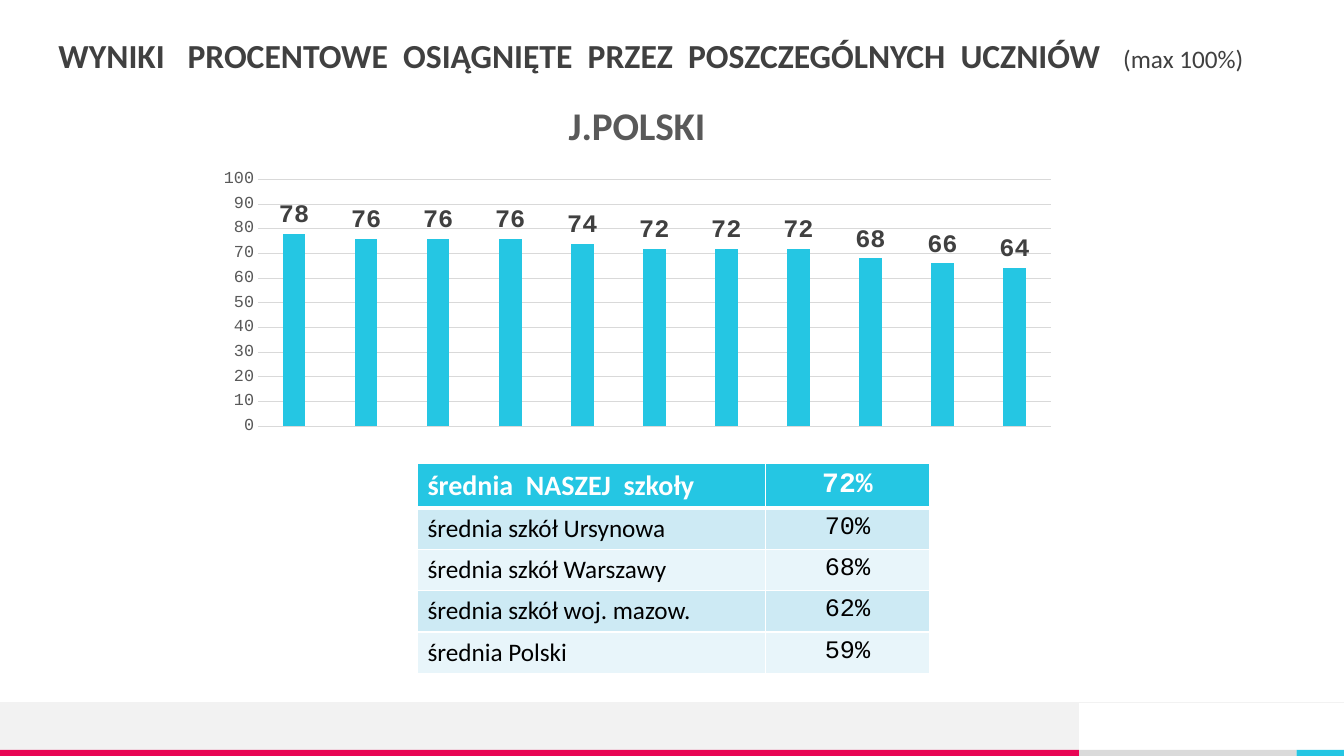
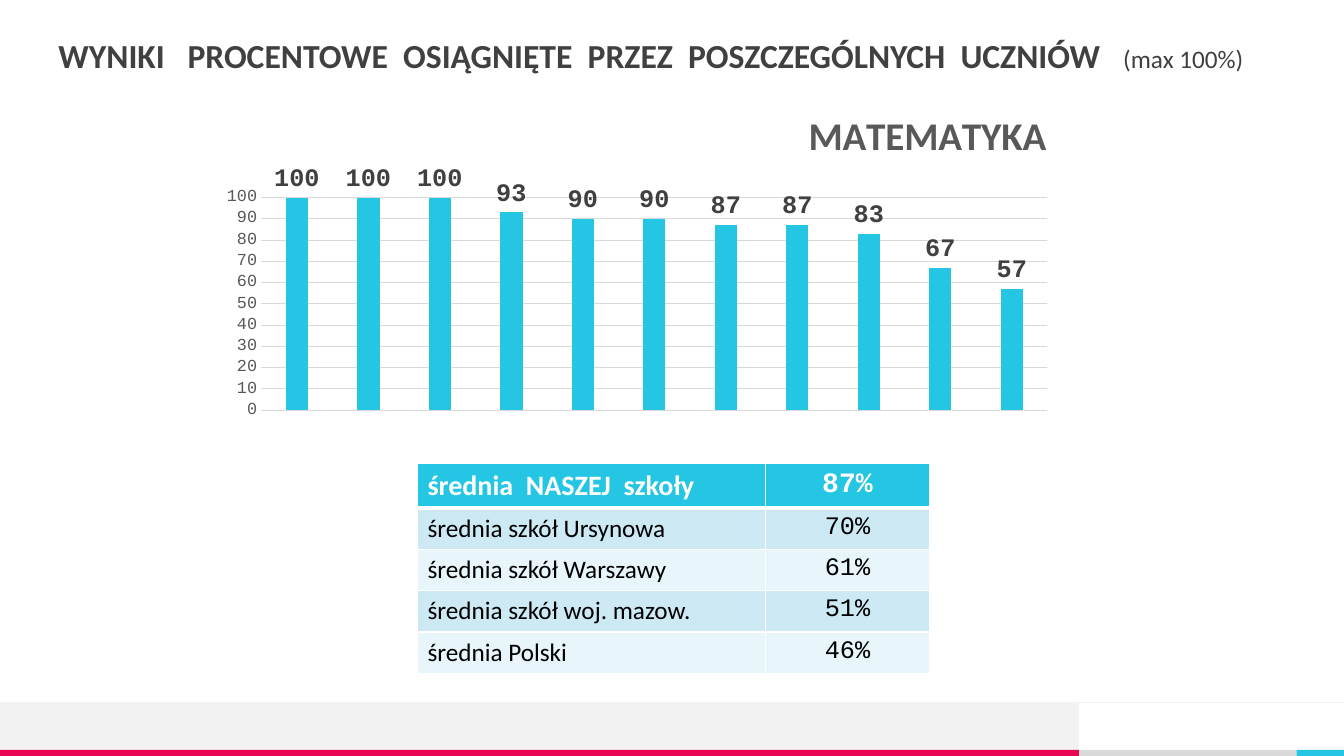
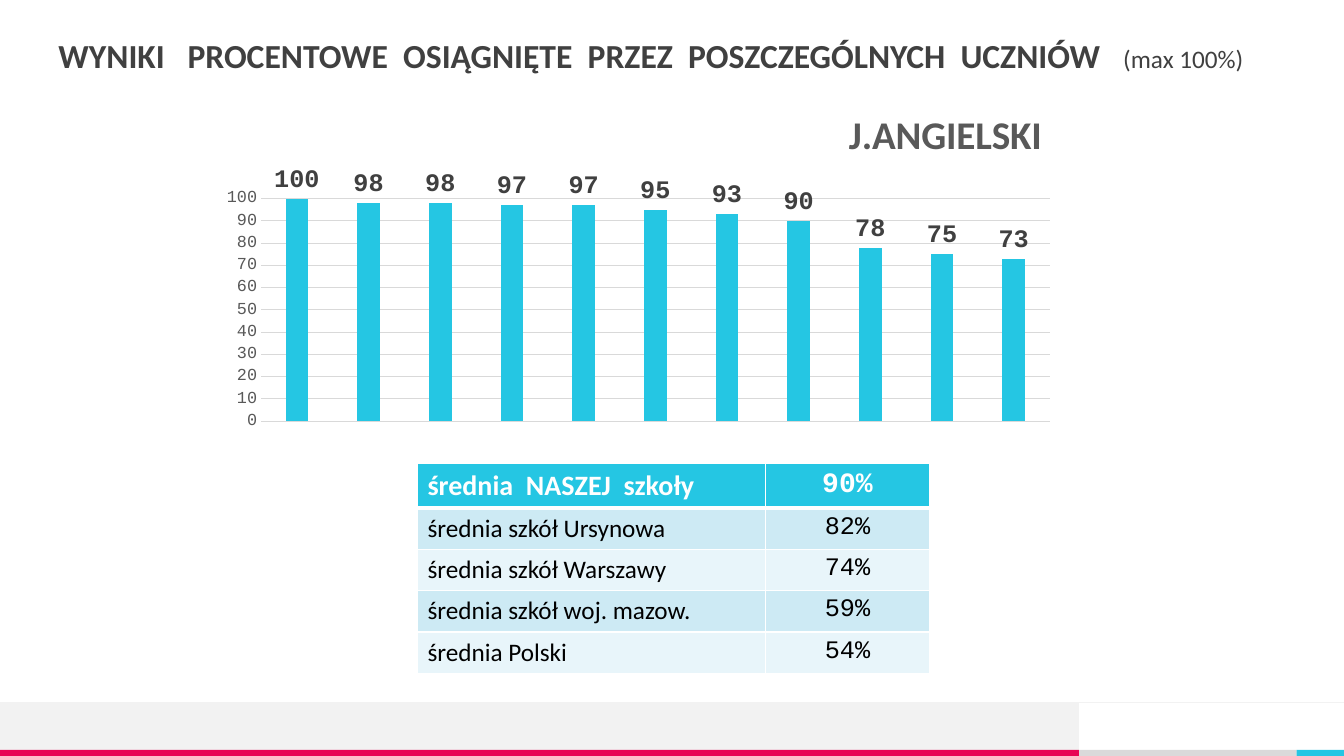
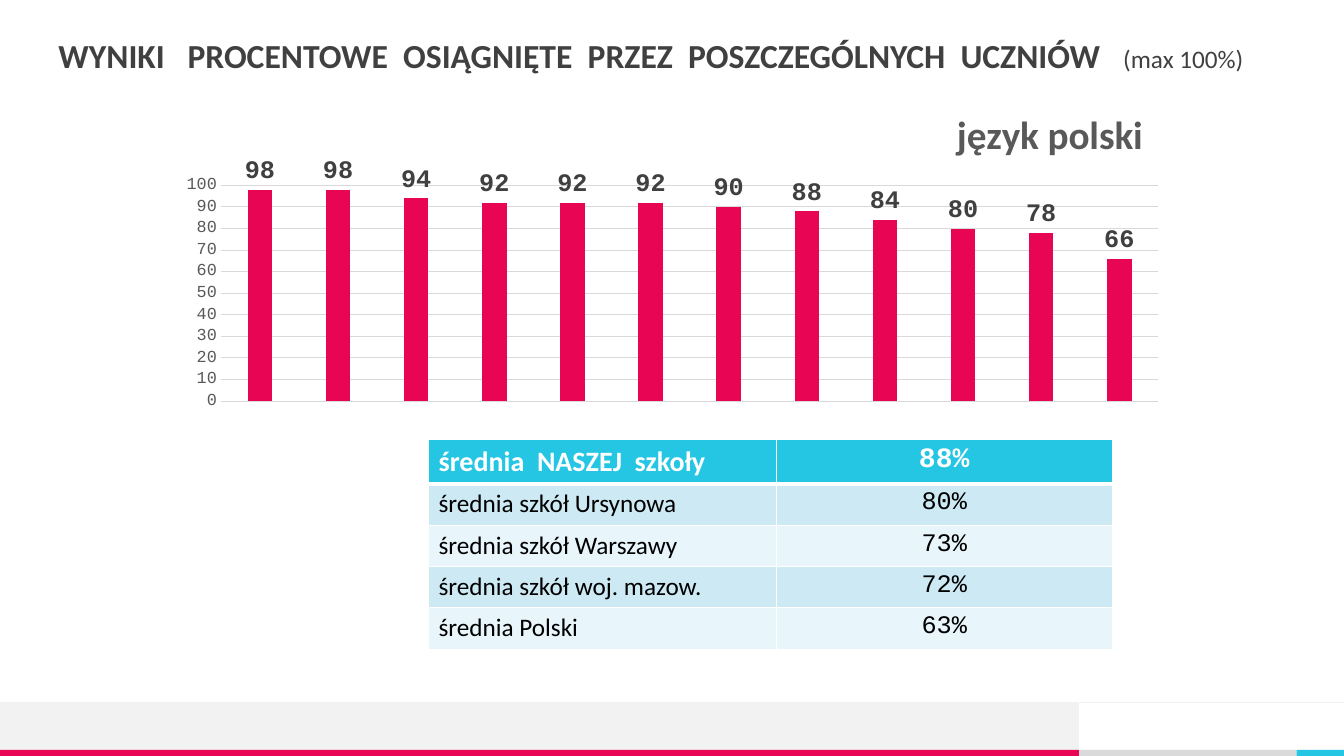
from dataclasses import dataclass

from lxml.etree import SubElement as Sub
from pptx import Presentation
from pptx.chart.data import CategoryChartData as ChartData
from pptx.dml.color import RGBColor as RGB
from pptx.enum.chart import XL_CHART_TYPE as Kind
from pptx.enum.chart import XL_LABEL_POSITION as Spot
from pptx.enum.chart import XL_TICK_MARK as Tick
from pptx.enum.shapes import MSO_CONNECTOR as Link
from pptx.enum.shapes import MSO_SHAPE as Form
from pptx.enum.text import MSO_ANCHOR as Anchor
from pptx.enum.text import MSO_AUTO_SIZE as Fit
from pptx.enum.text import PP_ALIGN as Align
from pptx.oxml import parse_xml
from pptx.oxml.ns import nsdecls, qn
from pptx.util import Inches, Pt


@dataclass(frozen=True)
class Theme:
    sans: str = "Calibri"
    mono: str = "Courier New"
    cyan: str = "25C6E3"
    pink: str = "E80554"
    ink: str = "404040"
    gray: str = "595959"
    grid: str = "D9D9D9"
    band: str = "F2F2F2"
    strip: str = "DADADA"
    black: str = "000000"
    white: str = "FFFFFF"
    rows: tuple = ("CDEAF4", "E8F5FA")
    title: int = 24
    head: int = 28
    top: int = 20
    body: int = 18
    axis: int = 12
    base: int = 10


@dataclass(frozen=True)
class Result:
    """Scores of one subject; boxes are left, top, width, height in inches."""
    name: str
    spot: tuple
    box: tuple
    plot: tuple
    scores: tuple
    means: tuple
    color: str
    grid: tuple = (4.14, 4.6)
    wide: float = 1.63


T = Theme()
WIDE, HIGH = 13.33, 7.5
BAND, FOOT, SPLIT, END = 6.97, 7.44, 10.7, 12.86
LABELS = ("średnia  NASZEJ  szkoły", "średnia szkół Ursynowa",
          "średnia szkół Warszawy", "średnia szkół woj. mazow.",
          "średnia Polski")
RESULTS = (
    Result("J.POLSKI", (5.57, 0.91), (2.05, 0.78, 8.54, 3.61),
           (2.56, 1.78, 7.86, 2.45),
           (78, 76, 76, 76, 74, 72, 72, 72, 68, 66, 64),
           (72, 70, 68, 62, 59), T.cyan),
    Result("MATEMATYKA", (7.95, 1.01), (2.08, 0.99, 8.48, 3.24),
           (2.59, 1.96, 7.8, 2.11),
           (100, 100, 100, 93, 90, 90, 87, 87, 83, 67, 57),
           (87, 70, 61, 51, 46), T.cyan),
    Result("J.ANGIELSKI", (8.35, 1), (2.08, 1, 8.5, 3.34),
           (2.59, 1.97, 7.82, 2.21),
           (100, 98, 98, 97, 97, 95, 93, 90, 78, 75, 73),
           (90, 82, 74, 59, 54), T.cyan),
    Result("język polski", (9.42, 0.97), (1.64, 1, 10.04, 3.14),
           (2.19, 1.84, 9.3, 2.14),
           (98, 98, 94, 92, 92, 92, 90, 88, 84, 80, 78, 66),
           (88, 80, 73, 72, 63), T.pink, (4.25, 4.36), 3.33),
)


def inch(*vals):
    return [Inches(v) for v in vals]


def style(font, size, color, bold=False, face=T.sans):
    font.size, font.bold, font.name = Pt(size), bold, face
    font.color.rgb = RGB.from_string(color)


def paint(fill, color):
    fill.solid()
    fill.fore_color.rgb = RGB.from_string(color)


def rect(slide, box, color):
    shape = slide.shapes.add_shape(Form.RECTANGLE, *inch(*box))
    shape.shadow.inherit = False
    paint(shape.fill, color)
    shape.line.fill.background()
    return shape


def rule(slide):
    line = slide.shapes.add_connector(
        Link.STRAIGHT, *inch(WIDE, BAND, 0, BAND))
    line.line.color.rgb = RGB.from_string(T.band)
    line.line.width = Pt(0.5)
    Sub(line.element.spPr, qn("a:effectLst"))
    return line


def dress(layout, slide):
    """Draw the shared footer and move it to the layout."""
    for item in list(layout.placeholders)[1:]:
        layout.shapes.element.remove(item.element)
    title = layout.placeholders[0]
    title.left, title.top, title.width, title.height = inch(
        0.58, 0.39, 12.56, 0.39)
    thick = HIGH - FOOT
    bars = (((SPLIT, FOOT, END - SPLIT, thick), T.strip),
            ((0, BAND, SPLIT, FOOT - BAND), T.band),
            ((0, FOOT, SPLIT, thick), T.pink),
            ((END, FOOT, WIDE - END, thick), T.cyan))
    parts = [rect(slide, box, color) for box, color in bars]
    for part in parts + [rule(slide)]:
        layout.shapes.element.append(part.element)


def heading(slide):
    frame = slide.shapes.title.text_frame
    frame.margin_left = frame.margin_right = 0
    frame.margin_top = frame.margin_bottom = 0
    frame.vertical_anchor, frame.auto_size = Anchor.TOP, Fit.NONE
    para = frame.paragraphs[0]
    tabs = Sub(para._p.get_or_add_pPr(), qn("a:tabLst"))
    Sub(tabs, qn("a:tab"), pos=str(Inches(10.56)), algn="l")
    para.alignment, para.line_spacing = Align.LEFT, 0.9
    para.space_before = Pt(10)
    style(para.font, T.title, T.ink, True)
    para.add_run().text = ("WYNIKI   PROCENTOWE  OSIĄGNIĘTE  PRZEZ  "
                           "POSZCZEGÓLNYCH  UCZNIÓW\t")
    note = para.add_run()
    note.text = "(max 100%)"
    note.font.size, note.font.bold = Pt(T.body), False


def place(node, index, box, spot):
    """Fix a chart part at a spot given in slide inches."""
    old = node.find(qn("c:layout"))
    if old is not None:
        node.remove(old)
    root = parse_xml(f"<c:layout {nsdecls('c')}/>")
    node.insert(index, root)
    man = Sub(root, qn("c:manualLayout"))
    x, y, wide, high = box
    vals = {"xMode": "edge", "yMode": "edge",
            "x": (spot[0] - x) / wide, "y": (spot[1] - y) / high}
    if len(spot) == 4:
        vals = {"layoutTarget": "inner", **vals,
                "w": spot[2] / wide, "h": spot[3] / high}
    for key, val in vals.items():
        Sub(man, qn("c:" + key), val=str(val))


def columns(slide, res):
    data = ChartData(number_format="0")
    data.categories = [str(n + 1) for n in range(len(res.scores))]
    data.add_series(res.name, res.scores)
    chart = slide.shapes.add_chart(
        Kind.COLUMN_CLUSTERED, *inch(*res.box), data).chart
    style(chart.font, T.base, T.black)
    chart.has_legend = False
    chart.has_title = True
    frame = chart.chart_title.text_frame
    frame.text = res.name
    style(frame.paragraphs[0].font, T.head, T.gray, True)
    chart.chart_title.include_in_layout = False
    place(chart.chart_title.element, 1, res.box, res.spot)
    place(chart.element.chart.plotArea, 0, res.box, res.plot)

    chart.category_axis.visible = False
    axis = chart.value_axis
    axis.minimum_scale, axis.maximum_scale, axis.major_unit = 0, 100, 10
    axis.major_tick_mark = axis.minor_tick_mark = Tick.NONE
    axis.format.line.fill.background()
    style(axis.tick_labels.font, T.axis, T.gray, face=T.mono)
    line = axis.major_gridlines.format.line
    line.color.rgb, line.width = RGB.from_string(T.grid), Pt(0.75)

    plot = chart.plots[0]
    plot.gap_width, plot.overlap = 219, -27
    plot.vary_by_categories = False
    paint(plot.series[0].format.fill, res.color)
    plot.has_data_labels = True
    tags = plot.data_labels
    tags.show_value, tags.position = True, Spot.OUTSIDE_END
    style(tags.font, T.body, T.ink, True, T.mono)


def edge(cell, **widths):
    props = cell._tc.get_or_add_tcPr()
    for side in "LRTB":
        line = Sub(props, qn("a:ln" + side),
                   w=str(Pt(widths.get(side, 1))))
        Sub(Sub(line, qn("a:solidFill")), qn("a:srgbClr"), val=T.white)


def means(slide, res):
    cols, step = (3.45, res.wide), 0.41
    grid = slide.shapes.add_table(
        len(LABELS), len(cols),
        *inch(*res.grid, sum(cols), step * len(LABELS))).table
    for col, wide in zip(grid.columns, cols):
        col.width = Inches(wide)
    for i, (label, mean) in enumerate(zip(LABELS, res.means)):
        grid.rows[i].height = Inches(step)
        first = i == 0
        look = (T.top, T.white, True) if first else (T.body, T.black, False)
        heavy = {0: {"B": 3}, 1: {"T": 3}}.get(i, {})
        fill = T.cyan if first else T.rows[(i - 1) % 2]
        for j, (text, face, side) in enumerate((
                (label, T.sans, Align.LEFT),
                (f"{mean}%", T.mono, Align.CENTER))):
            cell = grid.cell(i, j)
            cell.text = text
            para = cell.text_frame.paragraphs[0]
            para.alignment = side
            style(para.font, *look, face)
            edge(cell, **heavy)
            paint(cell.fill, fill)


def main():
    deck = Presentation()
    deck.slide_width, deck.slide_height = inch(WIDE, HIGH)
    layout = deck.slide_layouts.get_by_name("Title Only")
    for i, res in enumerate(RESULTS):
        slide = deck.slides.add_slide(layout)
        if i == 0:
            dress(layout, slide)
        heading(slide)
        columns(slide, res)
        means(slide, res)
    deck.save("out.pptx")


if __name__ == "__main__":
    main()
